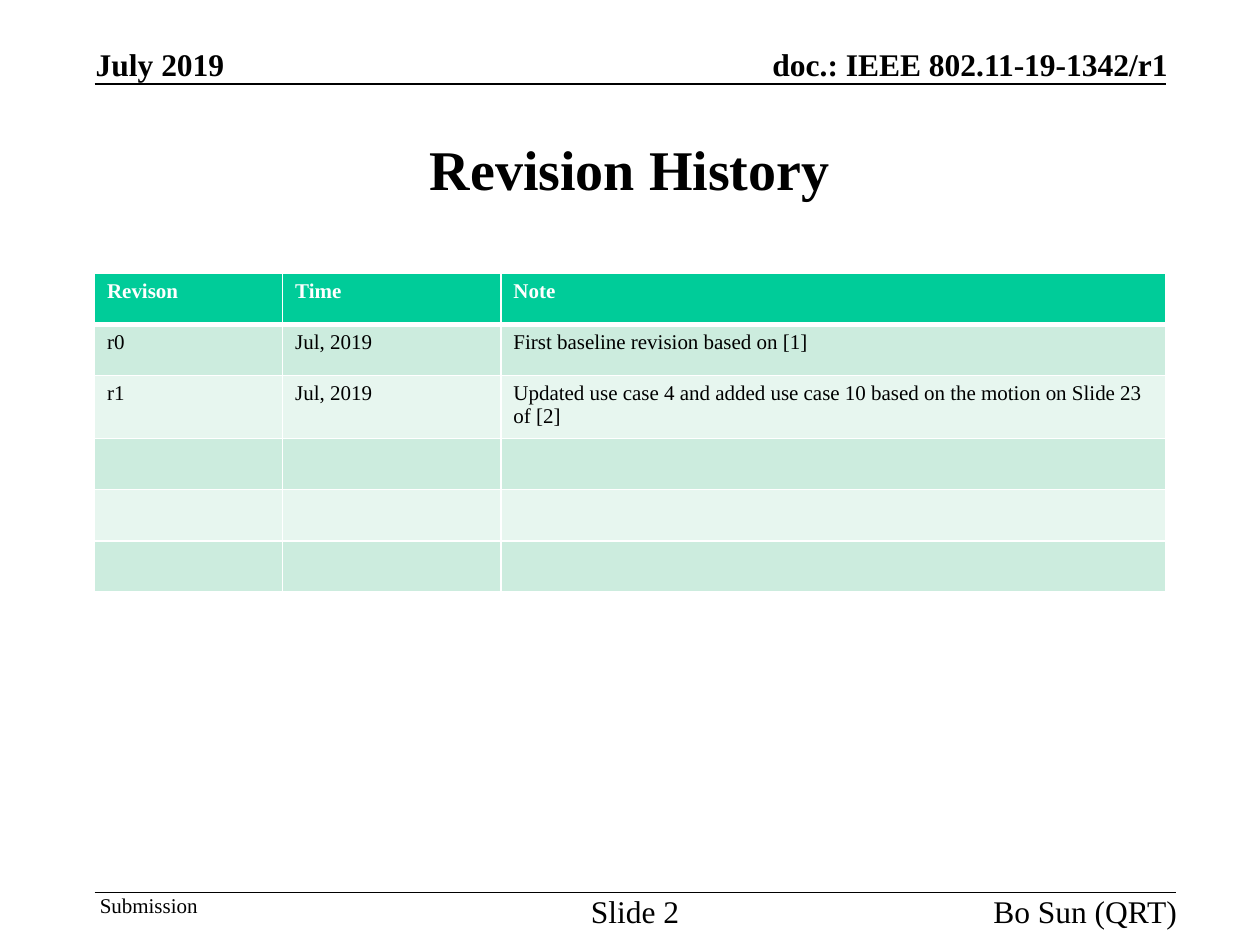
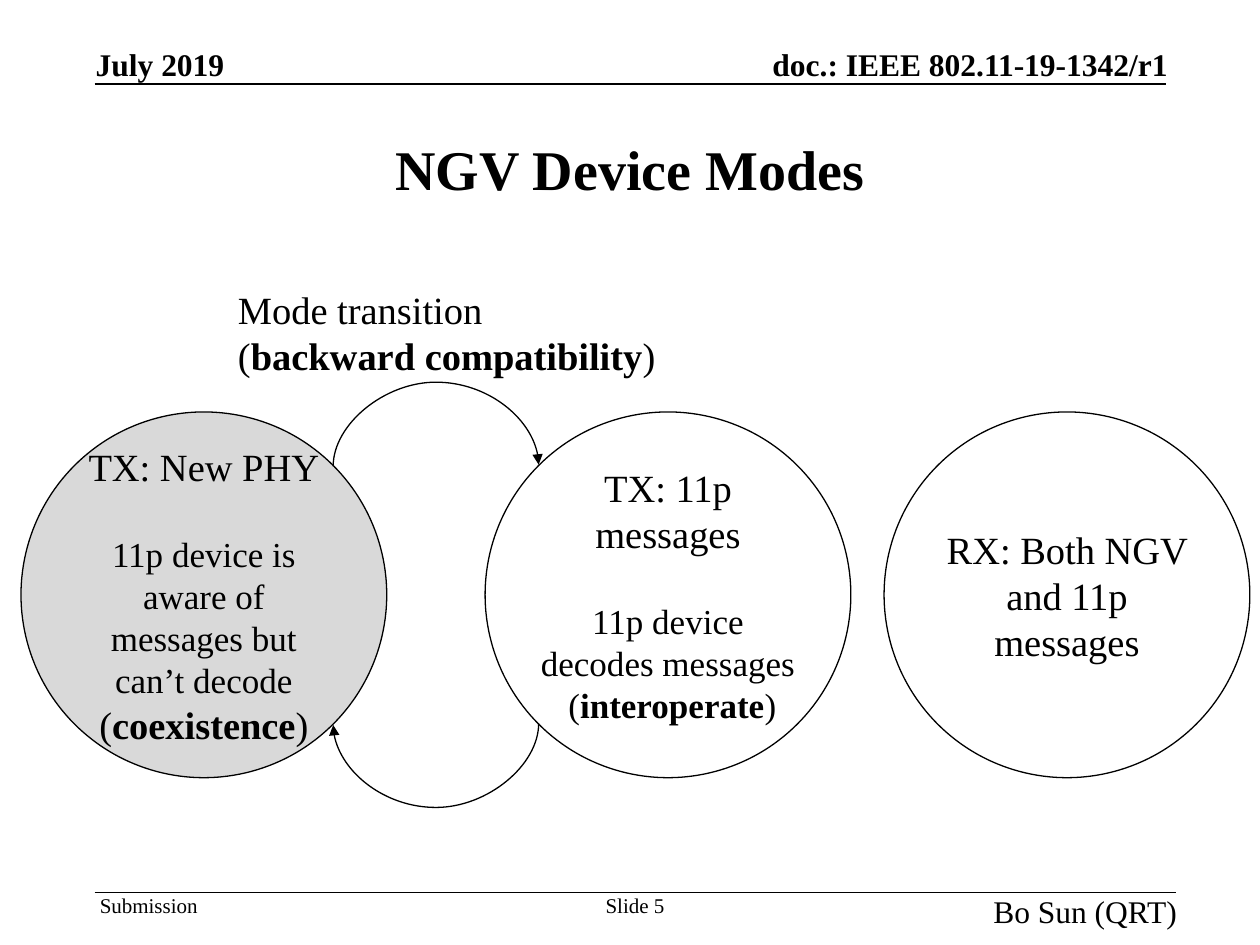
from dataclasses import dataclass
from lxml.etree import SubElement
from math import sqrt
from pptx import Presentation
from pptx.dml.color import RGBColor
from pptx.enum.shapes import MSO_CONNECTOR, MSO_SHAPE
from pptx.enum.text import MSO_ANCHOR, PP_ALIGN
from pptx.oxml.ns import qn
from pptx.util import Pt


@dataclass(frozen=True)
class Theme:
    font: str = "Times New Roman"
    ink: str = "000000"
    paper: str = "FFFFFF"
    header_row: str = "00CC99"
    odd_row: str = "CCECDE"
    even_row: str = "E7F6EF"
    new_mode: str = "D9D9D9"
    title: int = 32
    mode: int = 22
    detail: int = 20
    banner: int = 18
    small: int = 12


THEME = Theme()
LEFT, RIGHT = 54, 666
DIAMETER, CIRCLE_TOP = 209, 235.4
ARC_RISE = 48.5


def rgb(value):
    return RGBColor.from_string(value)


# Text: a paragraph is a list of (text, size, bold) runs
def write(frame, paragraphs, align=PP_ALIGN.LEFT, color=THEME.ink, gap=0):
    for number, pieces in enumerate(paragraphs):
        paragraph = frame.add_paragraph() if number else frame.paragraphs[0]
        paragraph.alignment = align
        if number == 1:
            paragraph.space_before = Pt(gap)
        for text, size, bold in pieces:
            run = paragraph.add_run()
            run.text = text
            run.font.name = THEME.font
            run.font.size = Pt(size)
            run.font.bold = bold
            run.font.color.rgb = rgb(color)


def set_insets(frame, sides=0, ends=0):
    frame.margin_left = frame.margin_right = Pt(sides)
    frame.margin_top = frame.margin_bottom = Pt(ends)


def add_label(slide, box, paragraphs, align=PP_ALIGN.LEFT, anchor=MSO_ANCHOR.TOP):
    frame = slide.shapes.add_textbox(*map(Pt, box)).text_frame
    frame.word_wrap = True
    frame.vertical_anchor = anchor
    set_insets(frame)
    write(frame, paragraphs, align)


# Lines
def style_line(connector, width):
    connector.line.color.rgb = rgb(THEME.ink)
    connector.line.width = Pt(width)
    SubElement(connector._element.spPr, qn("a:effectLst"))


def add_rule(slide, y, right):
    rule = slide.shapes.add_connector(
        MSO_CONNECTOR.STRAIGHT, Pt(LEFT), Pt(y), Pt(right), Pt(y))
    style_line(rule, 1)


def add_arc_arrow(slide, left, right, y, upward):
    """Curve between two points at one height, drawn as a turned connector."""
    span, middle = right - left, (left + right) / 2
    arc = slide.shapes.add_connector(
        MSO_CONNECTOR.CURVE, Pt(middle - 0.5), Pt(y - span / 2),
        Pt(middle + 0.5), Pt(y + span / 2))
    style_line(arc, 0.75)
    properties = arc._element.spPr
    transform = properties.find(qn("a:xfrm"))
    transform.set("rot", "5400000")
    if upward:
        transform.set("flipH", "1")
        transform.set("flipV", "1")
    # The bend is measured in multiples of the connector's 1 pt width
    guides = properties.find(qn("a:prstGeom")).get_or_add_avLst()
    SubElement(guides, qn("a:gd"), name="adj1", fmla=f"val {int(ARC_RISE * 100000)}")
    SubElement(properties.find(qn("a:ln")), qn("a:tailEnd"), type="triangle")


# Shared slide frame
def add_framed_slide(deck, title, number, number_size):
    slide = deck.slides.add_slide(deck.slide_layouts[6])
    add_rule(slide, 48.2, RIGHT)
    add_rule(slide, 510, 672)
    add_label(slide, (54.7, 26, 150, 21.6), [[("July 2019", THEME.banner, True)]],
              anchor=MSO_ANCHOR.BOTTOM)
    add_label(slide, (403, 26, 264.4, 21.6),
              [[("doc.: IEEE 802.11-19-1342/r1", THEME.banner, True)]],
              PP_ALIGN.RIGHT, MSO_ANCHOR.BOTTOM)
    add_label(slide, (LEFT, 54, RIGHT - LEFT, 84.2), [[(title, THEME.title, True)]],
              PP_ALIGN.CENTER, MSO_ANCHOR.MIDDLE)
    add_label(slide, (57, 510, 70, 14.4), [[("Submission", THEME.small, False)]])
    add_label(slide, (322.9, 510, 80, 14.4),
              [[(f"Slide {number}", number_size, False)]], PP_ALIGN.CENTER)
    add_label(slide, (552.5, 510, 120, 14.4),
              [[("Bo Sun (QRT)", THEME.banner, False)]], PP_ALIGN.RIGHT)
    return slide


# Revision table
def add_border(cell, side, width):
    line = SubElement(cell._tc.get_or_add_tcPr(), qn(f"a:{side}"), w=str(Pt(width)))
    fill = SubElement(line, qn("a:solidFill"))
    SubElement(fill, qn("a:srgbClr"), val=THEME.paper)


def add_revision_table(slide, rows, widths, row_height):
    table = slide.shapes.add_table(
        len(rows), len(widths), Pt(LEFT), Pt(156.2),
        Pt(sum(widths)), Pt(row_height * len(rows))).table
    for column, width in zip(table.columns, widths):
        column.width = Pt(width)
    for r, values in enumerate(rows):
        is_header = r == 0
        row_fill = THEME.odd_row if r % 2 else THEME.even_row
        for c, value in enumerate(values):
            cell = table.cell(r, c)
            for side in ("lnL", "lnR", "lnT", "lnB"):
                at_header_edge = (r, side) in ((0, "lnB"), (1, "lnT"))
                add_border(cell, side, 3 if at_header_edge else 1)
            cell.fill.solid()
            cell.fill.fore_color.rgb = rgb(THEME.header_row if is_header else row_fill)
            if value:
                write(cell.text_frame, [[(value, THEME.small, is_header)]],
                      color=THEME.paper if is_header else THEME.ink)


# Device mode circle
def add_mode(slide, left, fill, paragraphs, inset=3.6):
    circle = slide.shapes.add_shape(
        MSO_SHAPE.OVAL, Pt(left), Pt(CIRCLE_TOP), Pt(DIAMETER), Pt(DIAMETER))
    circle.shadow.inherit = False
    circle.fill.solid()
    circle.fill.fore_color.rgb = rgb(fill)
    circle.line.color.rgb = rgb(THEME.ink)
    circle.line.width = Pt(0.75)
    frame = circle.text_frame
    frame.word_wrap = True
    frame.vertical_anchor = MSO_ANCHOR.MIDDLE
    set_insets(frame, ends=inset)
    write(frame, paragraphs, PP_ALIGN.CENTER, gap=25)


def build_revision_history(deck):
    slide = add_framed_slide(deck, "Revision History", 2, THEME.banner)
    revisions = [
        ("Revison", "Time", "Note"),
        ("r0", "Jul, 2019", "First baseline revision based on [1]"),
        ("r1", "Jul, 2019", "Updated use case 4 and added use case 10 "
                            "based on the motion on Slide 23 of [2]"),
    ] + [("", "", "")] * 3
    add_revision_table(slide, revisions, (107.5, 124.7, 379.8), 29.2)


def build_device_modes(deck):
    slide = add_framed_slide(deck, "NGV Device Modes", 5, THEME.small)
    mode, detail = THEME.mode, THEME.detail
    new_phy_left, legacy_left, receive_left = 12, 277.2, 505.2

    add_mode(slide, new_phy_left, THEME.new_mode, [
        [("TX: New PHY", mode, False)],
        [("11p device is aware of messages but can’t decode ", detail, False),
         ("(", mode, False), ("coexistence", mode, True), (")", mode, False)],
    ], inset=0)
    add_mode(slide, legacy_left, THEME.paper, [
        [("TX: 11p messages", mode, False)],
        [("11p device decodes messages", detail, False)],
        [(" (", detail, False), ("interoperate", detail, True), (")", detail, False)],
    ])
    add_mode(slide, receive_left, THEME.paper,
             [[("RX: Both NGV and 11p messages", mode, False)]])

    # Transitions meet the circles on their diagonals
    radius = DIAMETER / 2
    diagonal = radius / sqrt(2)
    middle = CIRCLE_TOP + radius
    arc_left = new_phy_left + radius + diagonal
    arc_right = legacy_left + radius - diagonal
    add_arc_arrow(slide, arc_left, arc_right, middle - diagonal, upward=True)
    add_arc_arrow(slide, arc_left, arc_right, middle + diagonal, upward=False)
    add_label(slide, (136, 163.4, 249, 53), [
        [("Mode transition", mode, False)],
        [("(", mode, False), ("backward compatibility", mode, True), (")", mode, False)],
    ])


def main():
    deck = Presentation()
    deck.slide_width, deck.slide_height = Pt(720), Pt(540)
    build_revision_history(deck)
    build_device_modes(deck)
    deck.save("out.pptx")


if __name__ == "__main__":
    main()
